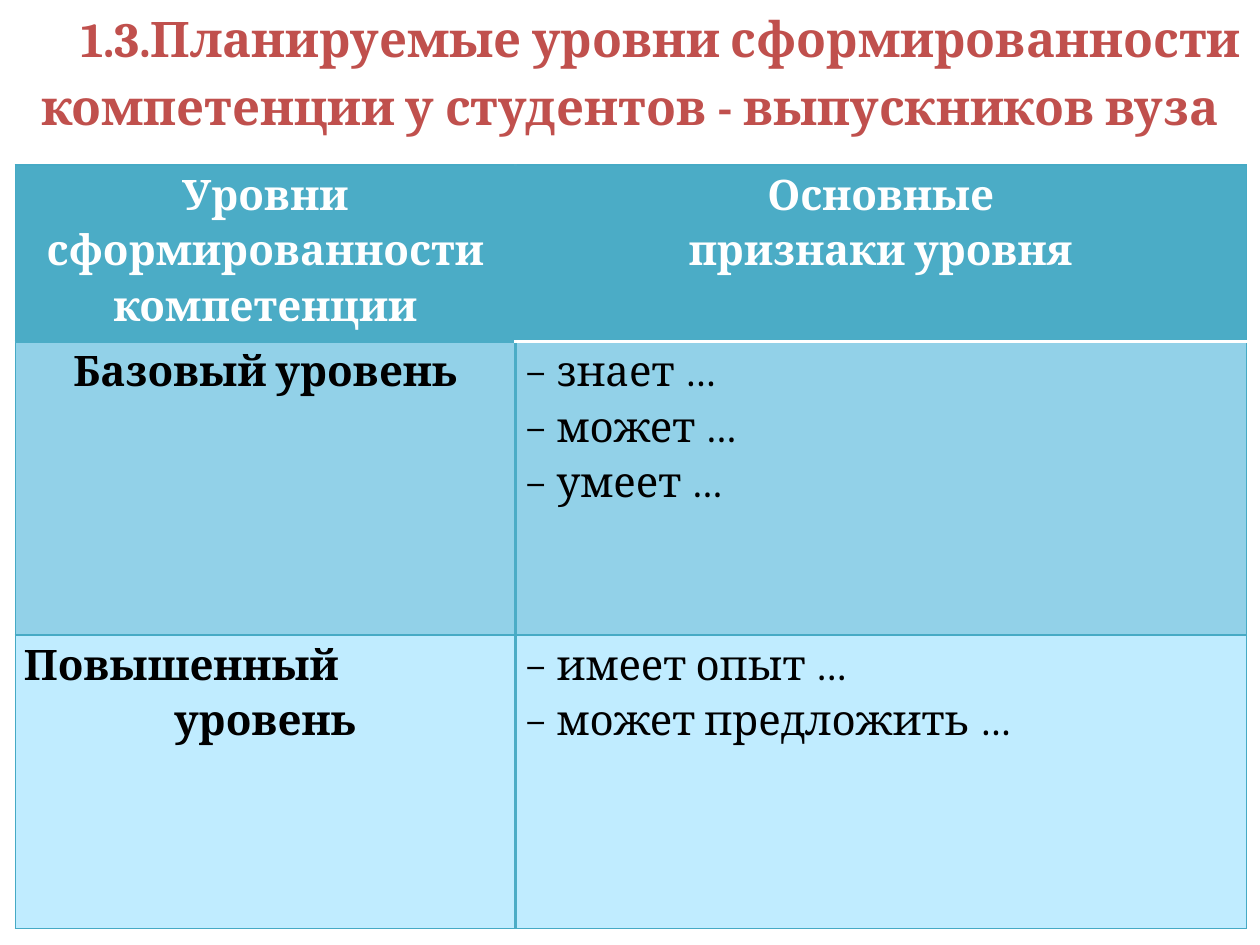
from lxml.etree import SubElement
from pptx import Presentation
from pptx.dml.color import RGBColor
from pptx.enum.text import MSO_ANCHOR, PP_ALIGN
from pptx.oxml.ns import qn
from pptx.util import Inches, Pt

COLORS = {
    "title": "C0504D", "header": "4BACC6", "basic": "92D1E8",
    "advanced": "C0ECFF", "line": "46AAC5", "white": "FFFFFF", "black": "000000",
}
CENTER, JUSTIFY = PP_ALIGN.CENTER, PP_ALIGN.JUSTIFY
THIN, THICK = ("line", 0.75), ("header", 2)
WHITE_RULE = ("white", 2)


class SlideBuilder:
    font = "Cambria"
    spacing = 1.15

    def __init__(self, prs):
        self.width, self.height = prs.slide_width, prs.slide_height
        self.s = prs.slides.add_slide(prs.slide_layouts[5])

    def box(self, x, y, w, h):
        return (round(x * self.width), round(y * self.height),
                round(w * self.width), round(h * self.height))

    def format(self, p, size, color, bold, align):
        p.alignment = align
        p.line_spacing = self.spacing
        p.space_before = Pt(0)
        for r in p.runs:
            r.font.name = self.font
            r.font.size = Pt(size)
            r.font.bold = bold
            r.font.color.rgb = RGBColor.from_string(COLORS[color])

    def title(self, text, x, y, w, h):
        sp = self.s.shapes.title
        sp.left, sp.top, sp.width, sp.height = self.box(x, y, w, h)
        tf = sp.text_frame
        tf.text = text
        tf.word_wrap = True
        tf.vertical_anchor = MSO_ANCHOR.TOP
        tf.margin_top = 0
        p = tf.paragraphs[0]
        self.format(p, 28, "title", True, CENTER)
        p._p.get_or_add_pPr().set("indent", str(Inches(0.49)))

    def table(self, rows, cols, x, y, w, h):
        tbl = self.s.shapes.add_table(len(rows), len(cols), *self.box(x, y, w, h)).table
        tbl.horz_banding = False
        for column, share in zip(tbl.columns, cols):
            column.width = round(share * w * self.width)
        for i, (share, fill, color, cells) in enumerate(rows):
            tbl.rows[i].height = round(share * h * self.height)
            for j, (bold, lines, borders) in enumerate(cells):
                self.cell(tbl.cell(i, j), fill, color, bold, lines, borders)

    def cell(self, cell, fill, color, bold, lines, borders):
        cell.margin_left = cell.margin_right = Inches(0.07)
        cell.margin_top = cell.margin_bottom = 0
        tf = cell.text_frame
        tf.text = "\n".join(text for text, _ in lines)
        for p, (_, align) in zip(tf.paragraphs, lines):
            self.format(p, 24, color, bold, align)
        self.borders(cell, borders)
        cell.fill.solid()
        cell.fill.fore_color.rgb = RGBColor.from_string(COLORS[fill])

    def borders(self, cell, borders):
        tc_pr = cell._tc.get_or_add_tcPr()
        for side, (color, width) in zip("LRTB", borders):
            ln = SubElement(tc_pr, qn(f"a:ln{side}"), w=str(Pt(width)))
            solid = SubElement(ln, qn("a:solidFill"))
            SubElement(solid, qn("a:srgbClr"), val=COLORS[color])


def lines(align, *texts):
    return [(text, align) for text in texts]


def main():
    prs = Presentation()
    prs.slide_width, prs.slide_height = Inches(10), Inches(7.5)
    slide = SlideBuilder(prs)
    slide.title("1.3.Планируемые уровни сформированности компетенции "
                "у студентов - выпускников вуза", 0, 0, 1, 1.55 / 7.5)

    left, right = (THIN, THICK, THIN, THIN), (THICK, THIN, THIN, THIN)
    rows = [
        (1.4 / 6.06, "header", "white", [
            (True, lines(CENTER, "Уровни", "сформированности", "компетенции"),
             (THIN, THICK, THIN, THICK)),
            (True, lines(CENTER, "Основные", "признаки уровня"),
             (THICK, THIN, THIN, WHITE_RULE))]),
        (2.33 / 6.06, "basic", "black", [
            (True, lines(CENTER, "Базовый уровень"), (THIN, THICK, THICK, THIN)),
            (False, lines(JUSTIFY, "− знает …", "− может …", "− умеет …"),
             (THICK, THIN, WHITE_RULE, THIN))]),
        (2.33 / 6.06, "advanced", "black", [
            (True, lines(JUSTIFY, "Повышенный") + lines(CENTER, "уровень"), left),
            (False, lines(JUSTIFY, "− имеет опыт …", "− может предложить …"), right)]),
    ]
    slide.table(rows, (3.97 / 9.77, 5.8 / 9.77),
                0.12 / 10, 1.31 / 7.5, 9.77 / 10, 6.06 / 7.5)
    prs.save("out.pptx")


if __name__ == "__main__":
    main()
